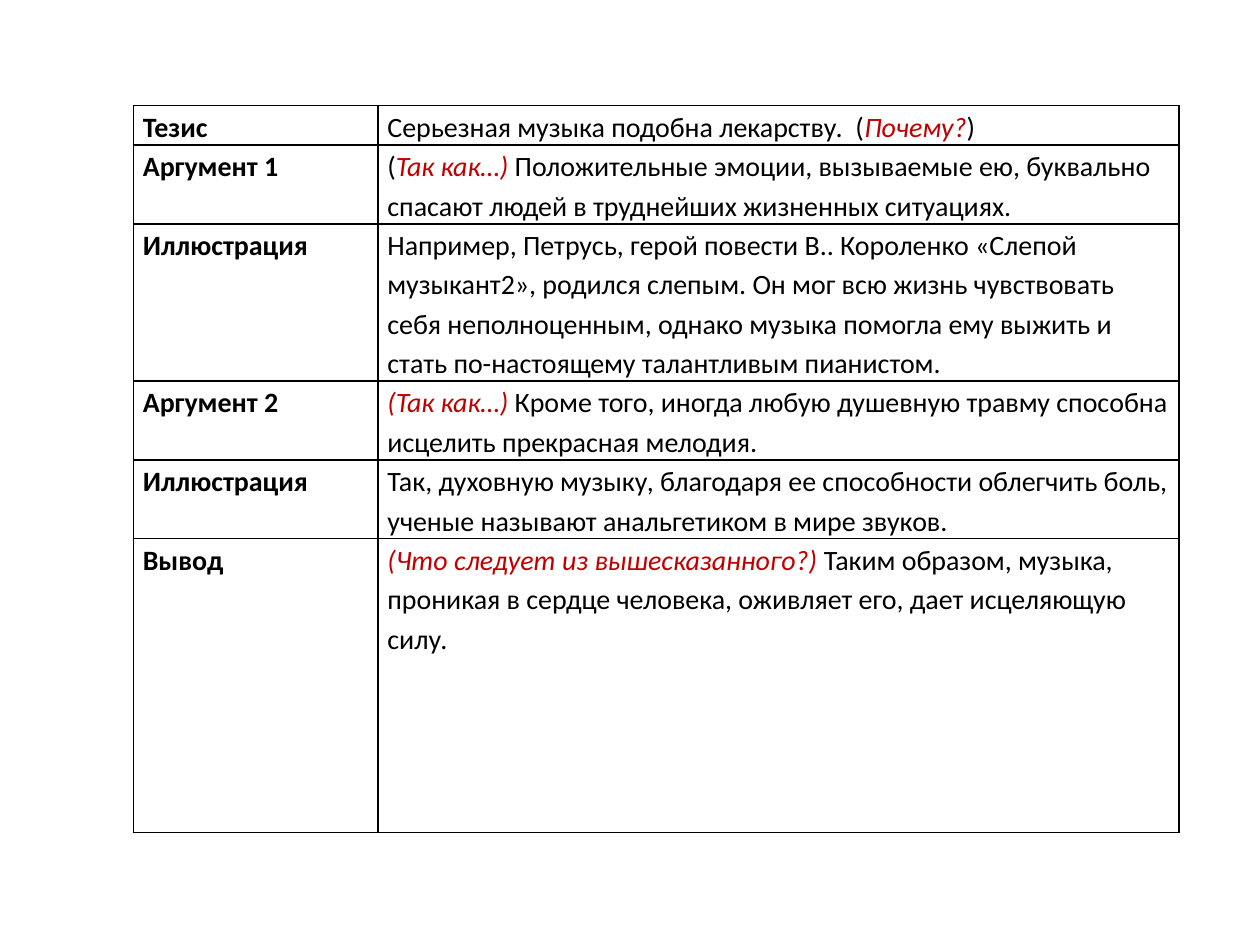
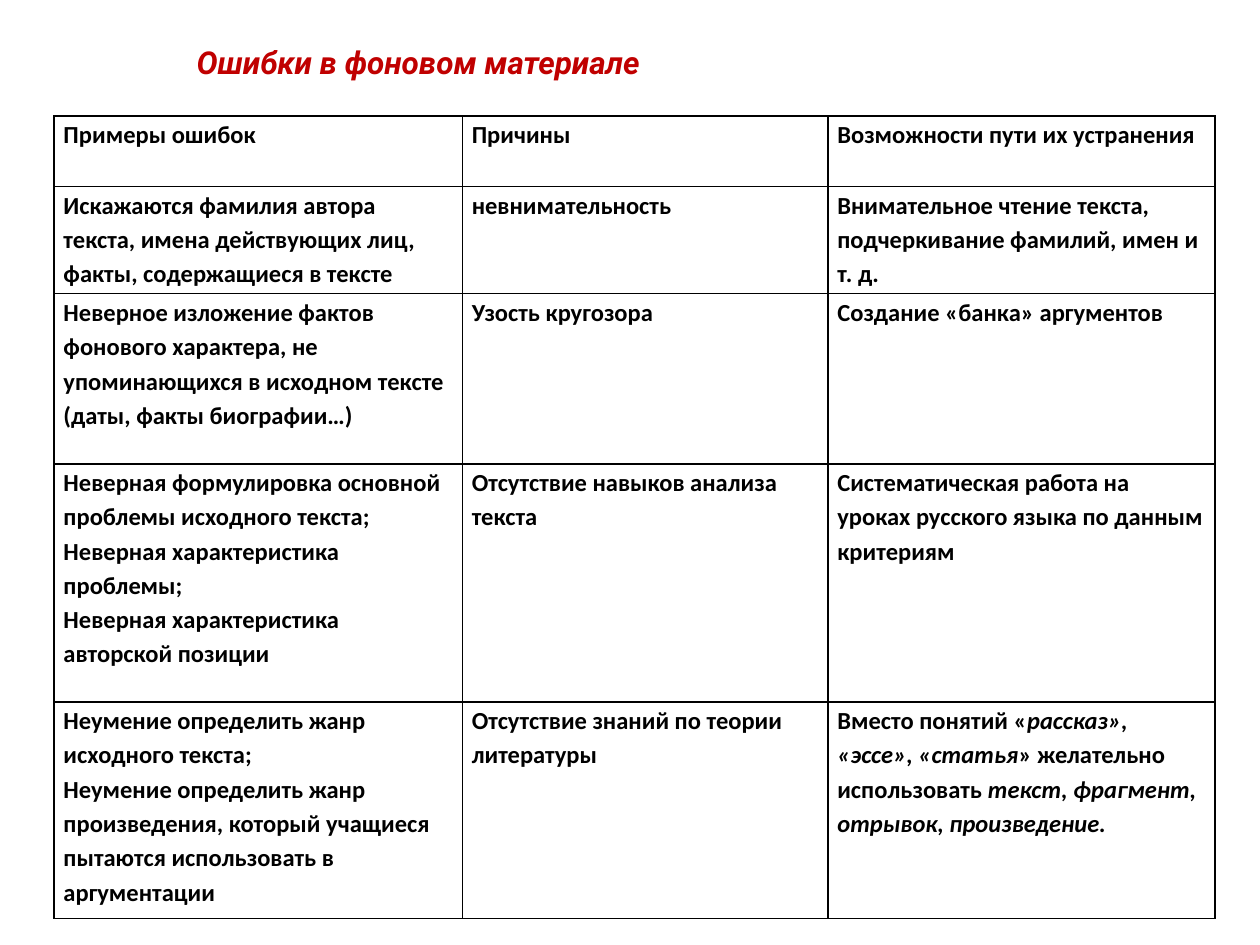
from dataclasses import dataclass

from lxml import etree
from pptx import Presentation
from pptx.dml.color import RGBColor
from pptx.enum.text import MSO_ANCHOR, MSO_AUTO_SIZE, PP_ALIGN
from pptx.oxml.ns import qn
from pptx.slide import Slide
from pptx.table import _Cell
from pptx.text.text import _Paragraph
from pptx.util import Cm, Pt

BLACK = RGBColor(0x00, 0x00, 0x00)
RED = RGBColor(0xC0, 0x00, 0x00)
TABLE_FONT = "Calibri"
TITLE_FONT = "Roboto"
LEFT = PP_ALIGN.LEFT
MIDDLE = MSO_ANCHOR.MIDDLE
NO_AUTOFIT = MSO_AUTO_SIZE.NONE
TITLE_ONLY, BLANK = 5, 6
CELL_INSET = Cm(0.19)
LINE_SPACING = 1.15
BORDER_WIDTH = Pt(1)
BORDER_SIDES = ("a:lnL", "a:lnR", "a:lnT", "a:lnB")


@dataclass(frozen=True)
class Phrase:
    text: str
    bold: bool = False
    italic: bool = False
    color: RGBColor = BLACK


Paragraph = list[Phrase]
CellText = list[Paragraph]


@dataclass(frozen=True)
class Grid:
    """A bordered table; lengths are in centimetres."""
    left: float
    top: float
    columns: list[float]
    rows: list[float]
    font_size: int
    cells: list[list[CellText]]


def plain(text: str) -> Phrase:
    return Phrase(text)


def bold(text: str) -> Phrase:
    return Phrase(text, bold=True)


def term(text: str) -> Phrase:
    return Phrase(text, bold=True, italic=True)


def prompt(text: str) -> Phrase:
    return Phrase(text, italic=True, color=RED)


def bold_cell(*lines: str) -> CellText:
    return [[bold(line)] for line in lines]


def add_text(paragraph: _Paragraph, text: str, *, size: int, font: str = TABLE_FONT,
             color: RGBColor = BLACK, bold: bool = False, italic: bool = False) -> None:
    run = paragraph.add_run()
    run.text = text
    run.font.name = font
    run.font.size = Pt(size)
    run.font.bold = bold
    run.font.italic = italic
    run.font.color.rgb = color


def add_borders(cell: _Cell) -> None:
    properties = cell._tc.get_or_add_tcPr()
    for side in BORDER_SIDES:
        line = etree.SubElement(properties, qn(side), w=str(BORDER_WIDTH))
        fill = etree.SubElement(line, qn("a:solidFill"))
        etree.SubElement(fill, qn("a:srgbClr"), val=str(BLACK))


def fill_cell(cell: _Cell, content: CellText, size: int) -> None:
    add_borders(cell)
    cell.fill.background()
    cell.margin_left = cell.margin_right = CELL_INSET
    cell.margin_top = cell.margin_bottom = 0
    frame = cell.text_frame
    for index, phrases in enumerate(content):
        paragraph = frame.add_paragraph() if index else frame.paragraphs[0]
        paragraph.line_spacing = LINE_SPACING
        for phrase in phrases:
            add_text(paragraph, phrase.text, size=size, color=phrase.color,
                     bold=phrase.bold, italic=phrase.italic)


def add_grid(slide: Slide, grid: Grid) -> None:
    table = slide.shapes.add_table(
        len(grid.rows), len(grid.columns), Cm(grid.left), Cm(grid.top),
        Cm(sum(grid.columns)), Cm(sum(grid.rows))).table
    table.first_row = table.horz_banding = False
    for column, width in zip(table.columns, grid.columns):
        column.width = Cm(width)
    for row, height, contents in zip(table.rows, grid.rows, grid.cells):
        row.height = Cm(height)
        for cell, content in zip(row.cells, contents):
            fill_cell(cell, content, grid.font_size)


def set_title(slide: Slide, text: str) -> None:
    title = slide.shapes.title
    title.left, title.top, title.width, title.height = Cm(3.71), Cm(0.74), Cm(9.8), Cm(1.02)
    frame = title.text_frame
    frame.auto_size = NO_AUTOFIT
    frame.word_wrap = True
    frame.vertical_anchor = MIDDLE
    paragraph = frame.paragraphs[0]
    paragraph.alignment = LEFT
    add_text(paragraph, text, size=18, font=TITLE_FONT, color=RED, bold=True, italic=True)


ESSAY_PARTS: list[tuple[str, Paragraph]] = [
    ("Тезис", [plain("Серьезная музыка подобна лекарству.  ("), prompt("Почему?"), plain(")")]),
    ("Аргумент 1", [
        plain("("), prompt("Так как…) "),
        plain("Положительные эмоции, вызываемые ею, буквально спасают людей "
              "в труднейших жизненных ситуациях.")]),
    ("Иллюстрация", [
        plain("Например, Петрусь, герой повести В.. Короленко «Слепой музыкант2», "
              "родился слепым. Он мог всю жизнь чувствовать себя неполноценным, однако "
              "музыка помогла ему выжить и стать по-настоящему талантливым пианистом.")]),
    ("Аргумент 2", [
        prompt("(Так как…) "),
        plain("Кроме того, иногда любую душевную травму способна исцелить "
              "прекрасная мелодия.")]),
    ("Иллюстрация", [
        plain("Так, духовную музыку, благодаря ее способности облегчить боль, "
              "ученые называют анальгетиком в мире звуков.")]),
    ("Вывод", [
        prompt("(Что следует из вышесказанного?) "),
        plain("Таким образом, музыка, проникая в сердце человека, оживляет его, "
              "дает исцеляющую силу.")]),
]

ESSAY_GRID = Grid(
    left=2.69, top=2.13, columns=[4.93, 16.15],
    rows=[0.76, 1.55, 3.12, 1.55, 1.55, 5.92], font_size=16,
    cells=[[bold_cell(part), [phrases]] for part, phrases in ESSAY_PARTS])

MISTAKES_GRID = Grid(
    left=1.09, top=2.34, columns=[8.23, 7.37, 7.8],
    rows=[1.42, 2.16, 3.43, 4.8, 4.37], font_size=14,
    cells=[
        [bold_cell("Примеры ошибок"),
         bold_cell("Причины"),
         bold_cell("Возможности пути их устранения")],
        [bold_cell("Искажаются фамилия автора текста, имена действующих лиц, "
                   "факты, содержащиеся в тексте"),
         bold_cell("невнимательность"),
         bold_cell("Внимательное чтение текста, подчеркивание фамилий, имен и т. д.")],
        [bold_cell("Неверное изложение фактов фонового характера, не упоминающихся "
                   "в исходном тексте (даты, факты биографии…)"),
         bold_cell("Узость кругозора"),
         bold_cell("Создание «банка» аргументов")],
        [bold_cell("Неверная формулировка основной проблемы исходного текста;",
                   "Неверная характеристика проблемы;",
                   "Неверная характеристика авторской позиции"),
         bold_cell("Отсутствие навыков анализа текста"),
         bold_cell("Систематическая работа на уроках русского языка по данным критериям")],
        [bold_cell("Неумение определить жанр исходного текста;",
                   "Неумение определить жанр произведения, который учащиеся пытаются "
                   "использовать в аргументации"),
         bold_cell("Отсутствие знаний по теории литературы"),
         [[bold("Вместо понятий «"), term("рассказ», «эссе», «статья"),
           bold("» желательно использовать "),
           term("текст, фрагмент, отрывок, произведение.")]]],
    ])


def main() -> None:
    deck = Presentation()
    deck.slide_width, deck.slide_height = Cm(25.4), Cm(19.05)

    essay_slide = deck.slides.add_slide(deck.slide_layouts[BLANK])
    add_grid(essay_slide, ESSAY_GRID)

    mistakes_slide = deck.slides.add_slide(deck.slide_layouts[TITLE_ONLY])
    set_title(mistakes_slide, "Ошибки в фоновом материале")
    add_grid(mistakes_slide, MISTAKES_GRID)

    deck.save("out.pptx")


if __name__ == "__main__":
    main()
